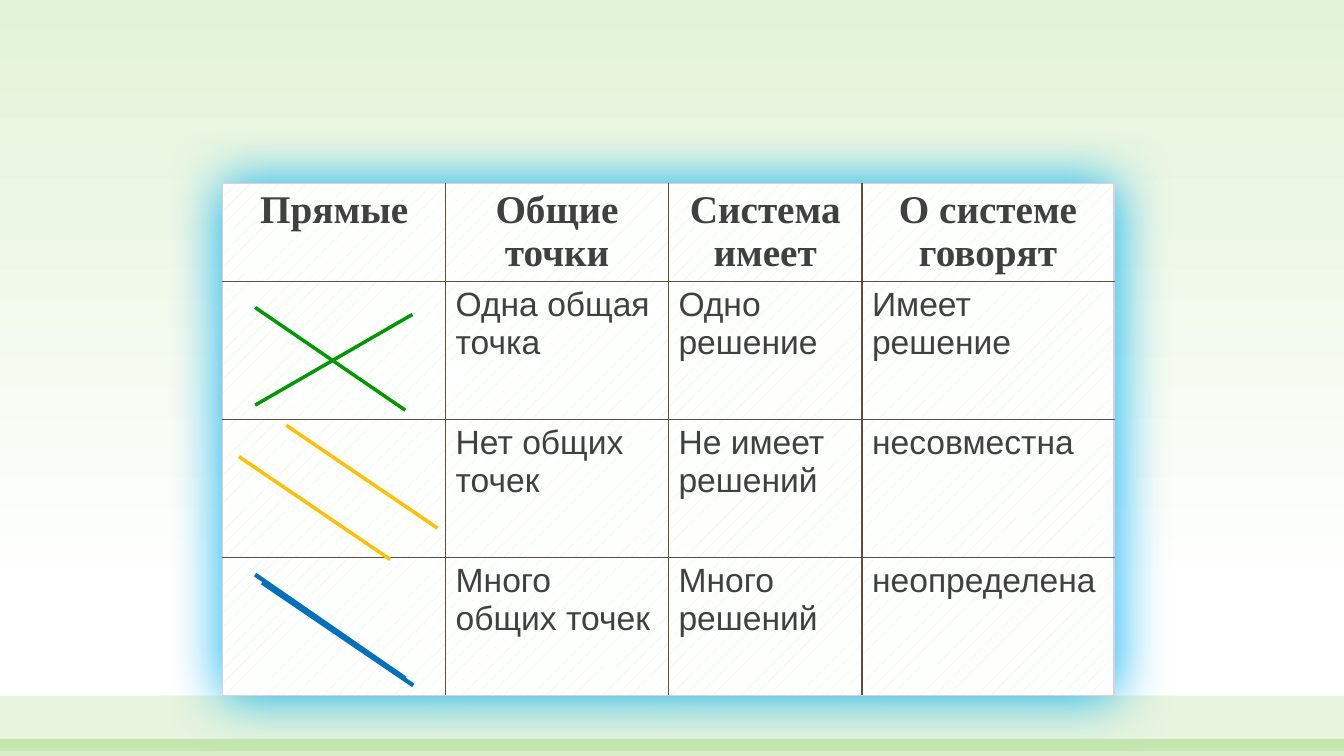
from lxml import etree
from pptx import Presentation
from pptx.dml.color import RGBColor
from pptx.enum import dml, shapes, text
from pptx.oxml import parse_xml
from pptx.oxml.ns import qn, nsdecls
from pptx.util import Inches, Pt

HEADINGS = ["Прямые", "Общие точки", "Система имеет", "О системе говорят"]
CASES = [
    ["", "Одна общая точка", "Одно решение", "Имеет решение"],
    ["", "Нет общих точек", "Не имеет решений", "несовместна"],
    ["", "Много общих точек", "Много решений", "неопределена"],
]
COLUMN_WIDTHS = [2.21, 2.21, 1.92, 2.5]
ROW_HEIGHTS = [0.97] + [1.37] * len(CASES)
TABLE_LEFT, TABLE_TOP = 2.21, 1.82

# Kind of pair, line width, and the two lines as (x1, y1, x2, y2)
LINE_PAIRS = [
    ("crossing", 2.5, [(2.53, 3.05, 4.02, 4.07), (2.53, 4.02, 4.09, 3.12)]),
    ("parallel", 2.5, [(2.37, 4.53, 3.87, 5.55), (2.84, 4.22, 4.34, 5.24)]),
    ("coinciding", 3, [(2.53, 5.7, 4.02, 6.73), (2.6, 5.78, 4.1, 6.8)]),
]
# Top, height, opacity in percent
FOOTER_BANDS = [(6.9, 0.55, 17), (7.33, 0.17, 28)]

THEME = {
    "sky": "E3F3D8", "ground": "FFFFFF", "band": "72C23C",
    "text": "404040", "inner": "624D38", "outer": "E3CBE6",
    "dots": "CCFFCC", "cell": "FFFFFF", "halo": "00B0F0",
    "crossing": "009900", "parallel": "FFC000", "coinciding": "0070C0",
    "head_font": "Times New Roman", "head_size": 28,
    "body_font": "Arial", "body_size": 24,
}


def color(name):
    return RGBColor.from_string(THEME[name])


def paint_background(slide):
    fill = slide.background.fill
    fill.gradient()
    fill.gradient_angle = 270
    for stop, name, position in zip(fill.gradient_stops, ("sky", "ground"), (0, 0.79)):
        stop.color.rgb = color(name)
        stop.position = position


def add_band(slide, top, height, opacity):
    band = slide.shapes.add_shape(shapes.MSO_SHAPE.RECTANGLE, 0, Inches(top),
                                  Inches(13.33), Inches(height))
    band.shadow.inherit = False
    band.line.fill.background()
    band.fill.solid()
    band.fill.fore_color.rgb = color("band")
    rgb = band.fill._xPr.find(".//" + qn("a:srgbClr"))
    etree.SubElement(rgb, qn("a:alpha"), val=str(opacity * 1000))


def write(cell, words, *, font, size, bold=False, align=text.PP_ALIGN.LEFT):
    paragraph = cell.text_frame.paragraphs[0]
    paragraph.alignment = align
    run = paragraph.add_run()
    run.text = words
    run.font.name = font
    run.font.size = Pt(size)
    run.font.bold = bold
    run.font.color.rgb = color("text")


def set_borders(cell, outer_sides):
    properties = cell._tc.get_or_add_tcPr()
    for index, side in enumerate("LRTB"):
        shade = THEME["outer" if side in outer_sides else "inner"]
        properties.insert(index, parse_xml(
            f'<a:ln{side} {nsdecls("a")} w="12700"><a:solidFill>'
            f'<a:srgbClr val="{shade}"/></a:solidFill></a:ln{side}>'))


def add_halo(table):
    """Give the table a soft glow all round, as a blurred shadow without offset."""
    table._tbl.tblPr.insert(0, parse_xml(
        f'<a:effectLst {nsdecls("a")}><a:outerShdw blurRad="{Pt(40)}" dist="0" '
        f'algn="ctr" rotWithShape="0"><a:srgbClr val="{THEME["halo"]}"/>'
        '</a:outerShdw></a:effectLst>'))


def add_solutions_table(slide):
    rows = [HEADINGS] + CASES
    last_row, last_column = len(rows) - 1, len(HEADINGS) - 1
    table = slide.shapes.add_table(
        len(rows), len(HEADINGS), Inches(TABLE_LEFT), Inches(TABLE_TOP),
        Inches(sum(COLUMN_WIDTHS)), Inches(sum(ROW_HEIGHTS))).table
    table.first_row = table.horz_banding = False
    add_halo(table)
    for column, width in zip(table.columns, COLUMN_WIDTHS):
        column.width = Inches(width)
    for row, height in zip(table.rows, ROW_HEIGHTS):
        row.height = Inches(height)

    for r, row in enumerate(rows):
        for c, words in enumerate(row):
            cell = table.cell(r, c)
            cell.fill.patterned()
            cell.fill.pattern = dml.MSO_PATTERN.PERCENT_5
            cell.fill.fore_color.rgb = color("dots")
            cell.fill.back_color.rgb = color("cell")
            edges = {"L": c == 0, "R": c == last_column, "T": r == 0, "B": r == last_row}
            set_borders(cell, [side for side, is_outer in edges.items() if is_outer])
            if r == 0:
                write(cell, words, font=THEME["head_font"], size=THEME["head_size"],
                      bold=True, align=text.PP_ALIGN.CENTER)
            elif words:
                write(cell, words, font=THEME["body_font"], size=THEME["body_size"])


def add_line(slide, ends, name, width):
    line = slide.shapes.add_connector(shapes.MSO_CONNECTOR.STRAIGHT, *map(Inches, ends))
    line.line.color.rgb = color(name)
    line.line.width = Pt(width)
    etree.SubElement(line._element.spPr, qn("a:effectLst"))


def main():
    deck = Presentation()
    deck.slide_width, deck.slide_height = Inches(13.33), Inches(7.5)
    slide = deck.slides.add_slide(deck.slide_layouts[6])
    paint_background(slide)
    for band in FOOTER_BANDS:
        add_band(slide, *band)
    add_solutions_table(slide)
    for kind, width, pair in LINE_PAIRS:
        for ends in pair:
            add_line(slide, ends, kind, width)
    deck.save("out.pptx")


if __name__ == "__main__":
    main()
